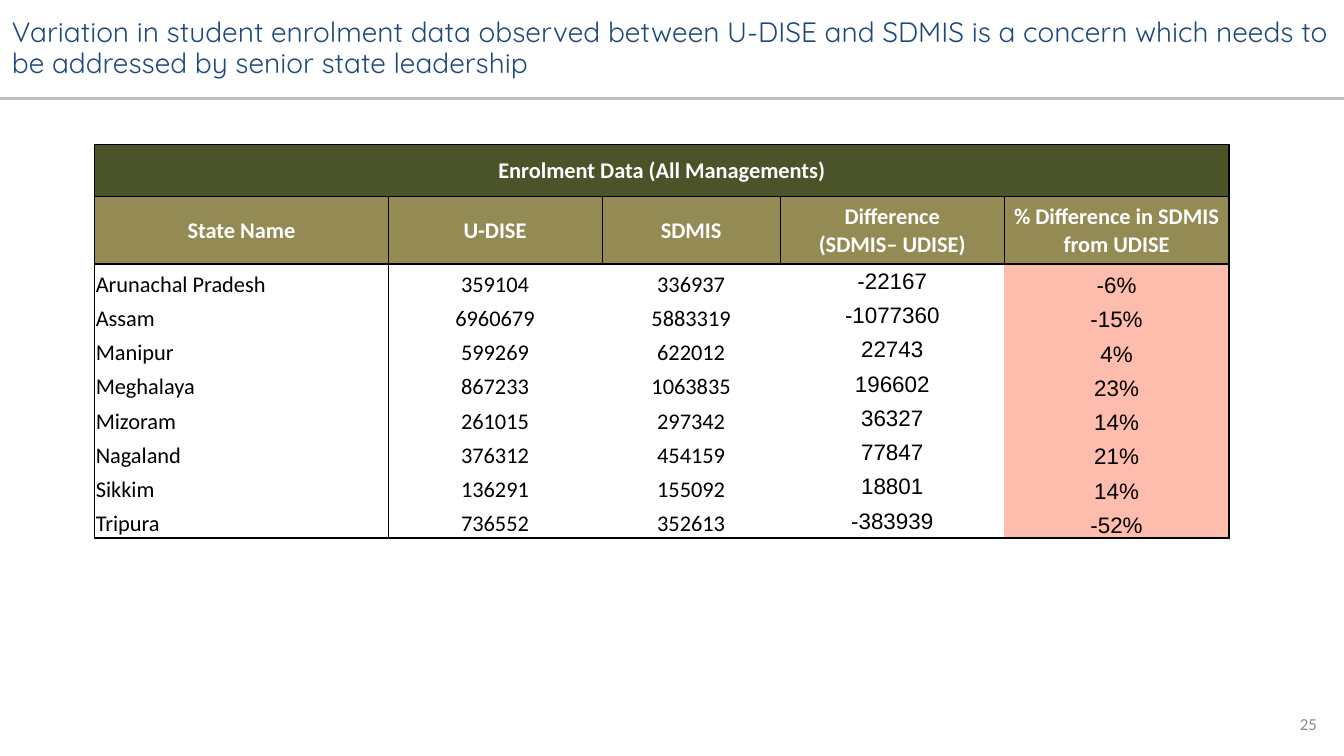
from lxml.etree import SubElement
from pptx import Presentation
from pptx.dml.color import RGBColor
from pptx.enum.shapes import MSO_CONNECTOR
from pptx.enum.text import MSO_ANCHOR, PP_ALIGN
from pptx.oxml.ns import qn
from pptx.util import Inches, Pt

COLORS = {
    "title": "1F497D", "rule": "BFBFBF", "number": "8C8C8C",
    "white": "FFFFFF", "black": "000000",
    "banner": "4B5328", "header": "948A54", "percent": "FEBCAC",
}
TITLE = ("Variation in student enrolment data observed between U-DISE and SDMIS is a concern "
         "which needs to be addressed by senior state leadership")
BANNER = "Enrolment Data (All Managements)"
HEADERS = ["State Name", "U-DISE", "SDMIS", "Difference\n(SDMIS– UDISE)",
           "% Difference in SDMIS from UDISE"]
ENROLMENT = [
    ("Arunachal Pradesh", 359104, 336937),
    ("Assam", 6960679, 5883319),
    ("Manipur", 599269, 622012),
    ("Meghalaya", 867233, 1063835),
    ("Mizoram", 261015, 297342),
    ("Nagaland", 376312, 454159),
    ("Sikkim", 136291, 155092),
    ("Tripura", 736552, 352613),
]
COLUMN_WIDTHS = [2.91, 2.12, 1.77, 2.22, 2.23]
ROW_HEIGHTS = [0.52, 0.67] + [0.34] * len(ENROLMENT)
LAST_COLUMN = len(HEADERS) - 1
LAST_ROW = len(ROW_HEIGHTS) - 1


def rgb(name):
    """Return the named colour."""
    return RGBColor.from_string(COLORS[name])


def set_attributes(target, values):
    """Set each attribute of target from a dict."""
    for name, value in values.items():
        setattr(target, name, value)


def format_text(text_frame, color, font, paragraph_format):
    """Format every paragraph of a text frame."""
    for paragraph in text_frame.paragraphs:
        set_attributes(paragraph, paragraph_format)
        set_attributes(paragraph.font, font)
        paragraph.font.color.rgb = rgb(color)


def add_text(slide, box, text, color, font, paragraph_format):
    """Add a wrapped, vertically centred text box."""
    shape = slide.shapes.add_textbox(*map(Inches, box))
    text_frame = shape.text_frame
    set_attributes(text_frame, {"word_wrap": True, "vertical_anchor": MSO_ANCHOR.MIDDLE,
                                "text": text})
    format_text(text_frame, color, font, paragraph_format)
    return shape


def add_rule(slide, top):
    """Add a grey line across the slide."""
    rule = slide.shapes.add_connector(MSO_CONNECTOR.STRAIGHT, 0, Inches(top),
                                      Inches(13.33), Inches(top))
    rule.line.color.rgb = rgb("rule")
    rule.line.width = Pt(1.5)
    SubElement(rule._element.spPr, qn("a:effectLst"))


def border_widths(row, column):
    """Return the left, right, top and bottom border widths of a cell."""
    inner = 0.5 if row == 1 else 0
    return {
        "a:lnL": 1 if column <= 1 else inner,
        "a:lnR": 1 if column in (0, LAST_COLUMN) else inner,
        "a:lnT": 1 if row <= 2 else 0,
        "a:lnB": 1 if row <= 1 or row == LAST_ROW else 0,
    }


def draw_borders(cell, widths):
    """Draw black borders, or none where the width is zero."""
    properties = cell._tc.get_or_add_tcPr()
    for tag, width in widths.items():
        line = SubElement(properties, qn(tag), w=str(Pt(width)))
        if width:
            fill = SubElement(line, qn("a:solidFill"))
            SubElement(fill, qn("a:srgbClr"), val=COLORS["black"])
        else:
            SubElement(line, qn("a:noFill"))


def fill_name(row, column):
    """Return the fill colour name of a cell, or None."""
    if row <= 1:
        return ["banner", "header"][row]
    return {0: None, LAST_COLUMN: "percent"}.get(column, "white")


def format_cell(cell, row, column, text):
    """Write and format one table cell."""
    heading = row <= 1
    centred = heading or column == 3
    set_attributes(cell, {
        "text": text,
        "vertical_anchor": MSO_ANCHOR.MIDDLE if centred else MSO_ANCHOR.BOTTOM,
        "margin_left": Inches(0.01), "margin_right": Inches(0.01),
        "margin_top": Inches(0.01), "margin_bottom": 0,
    })
    draw_borders(cell, border_widths(row, column))
    fill = fill_name(row, column)
    if fill:
        cell.fill.solid()
        cell.fill.fore_color.rgb = rgb(fill)
    else:
        cell.fill.background()
    font = {"name": "Arial" if column >= 3 and not heading else "Calibri",
            "size": Pt(16), "bold": heading}
    alignment = PP_ALIGN.CENTER if heading or column else PP_ALIGN.LEFT
    format_text(cell.text_frame, "white" if heading else "black", font, {"alignment": alignment})


def table_rows():
    """Return the texts of all rows, with the differences worked out."""
    rows = [[BANNER] + [""] * LAST_COLUMN, HEADERS]
    for state, udise, sdmis in ENROLMENT:
        difference = sdmis - udise
        rows.append([state, str(udise), str(sdmis), str(difference), f"{difference / udise:.0%}"])
    return rows


def add_enrolment_table(slide):
    """Add the enrolment table."""
    frame = slide.shapes.add_table(len(ROW_HEIGHTS), len(HEADERS), Inches(0.94), Inches(1.43),
                                   Inches(sum(COLUMN_WIDTHS)), Inches(sum(ROW_HEIGHTS)))
    table = frame.table
    set_attributes(table, {"first_row": False, "horz_banding": False})
    for column, width in zip(table.columns, COLUMN_WIDTHS):
        column.width = Inches(width)
    for row, height in zip(table.rows, ROW_HEIGHTS):
        row.height = Inches(height)
    for row, texts in enumerate(table_rows()):
        for column, text in enumerate(texts):
            format_cell(table.cell(row, column), row, column, text)
    table.cell(0, 0).merge(table.cell(0, LAST_COLUMN))


def main():
    """Build and save the slide."""
    presentation = Presentation()
    set_attributes(presentation, {"slide_width": Inches(13.33), "slide_height": Inches(7.5)})
    slide = presentation.slides.add_slide(presentation.slide_layouts[6])
    for top in (0.97, 0.98):
        add_rule(slide, top)
    title = add_text(slide, (0.02, 0.01, 13.31, 0.95), TITLE, "title",
                     {"name": "Quicksand", "size": Pt(20)}, {"line_spacing": 0.9})
    title.fill.solid()
    title.fill.fore_color.rgb = rgb("white")
    add_text(slide, (10.16, 6.98, 3, 0.4), "25", "number",
             {"name": "Calibri", "size": Pt(12)}, {"alignment": PP_ALIGN.RIGHT})
    add_enrolment_table(slide)
    presentation.save("out.pptx")


if __name__ == "__main__":
    main()
